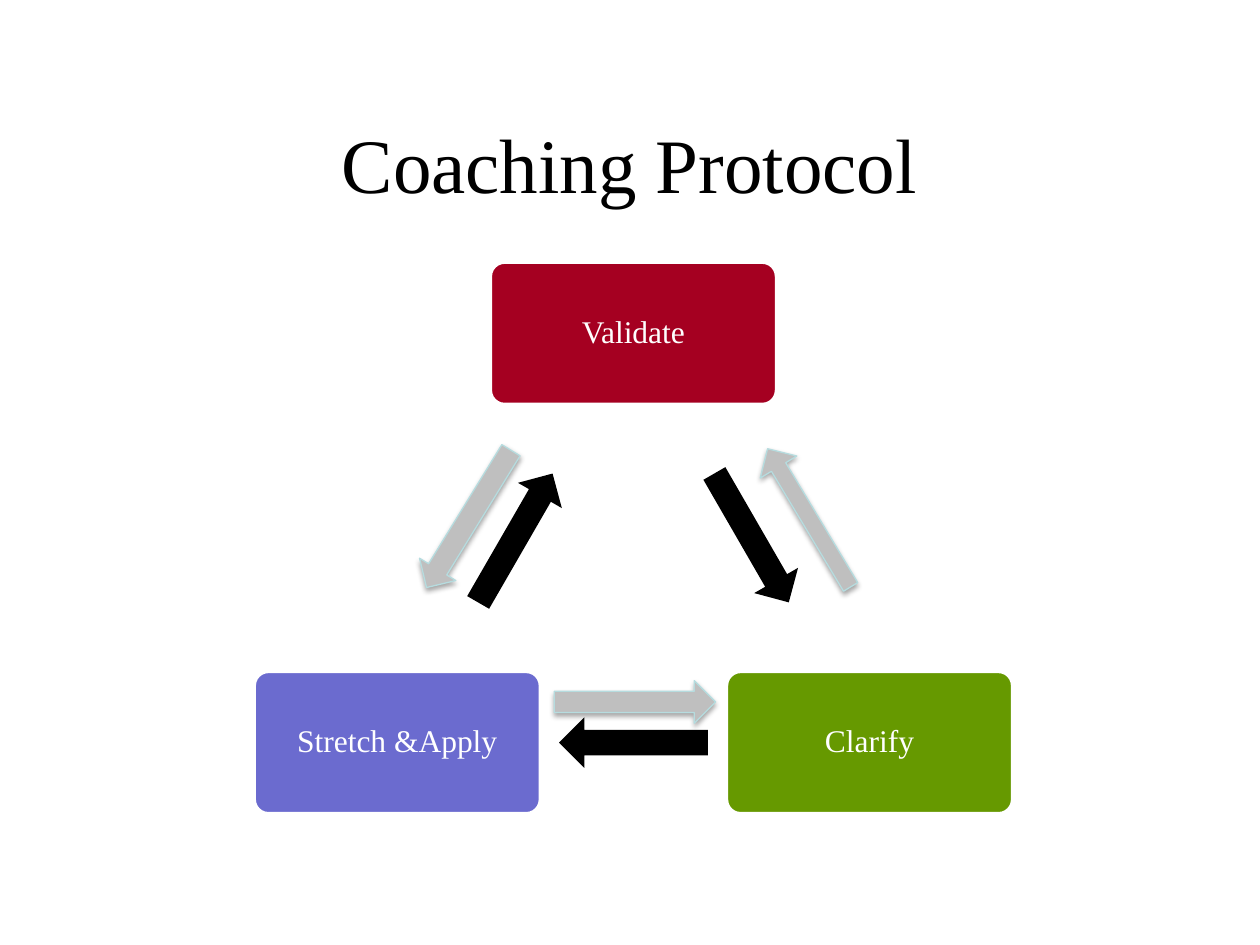
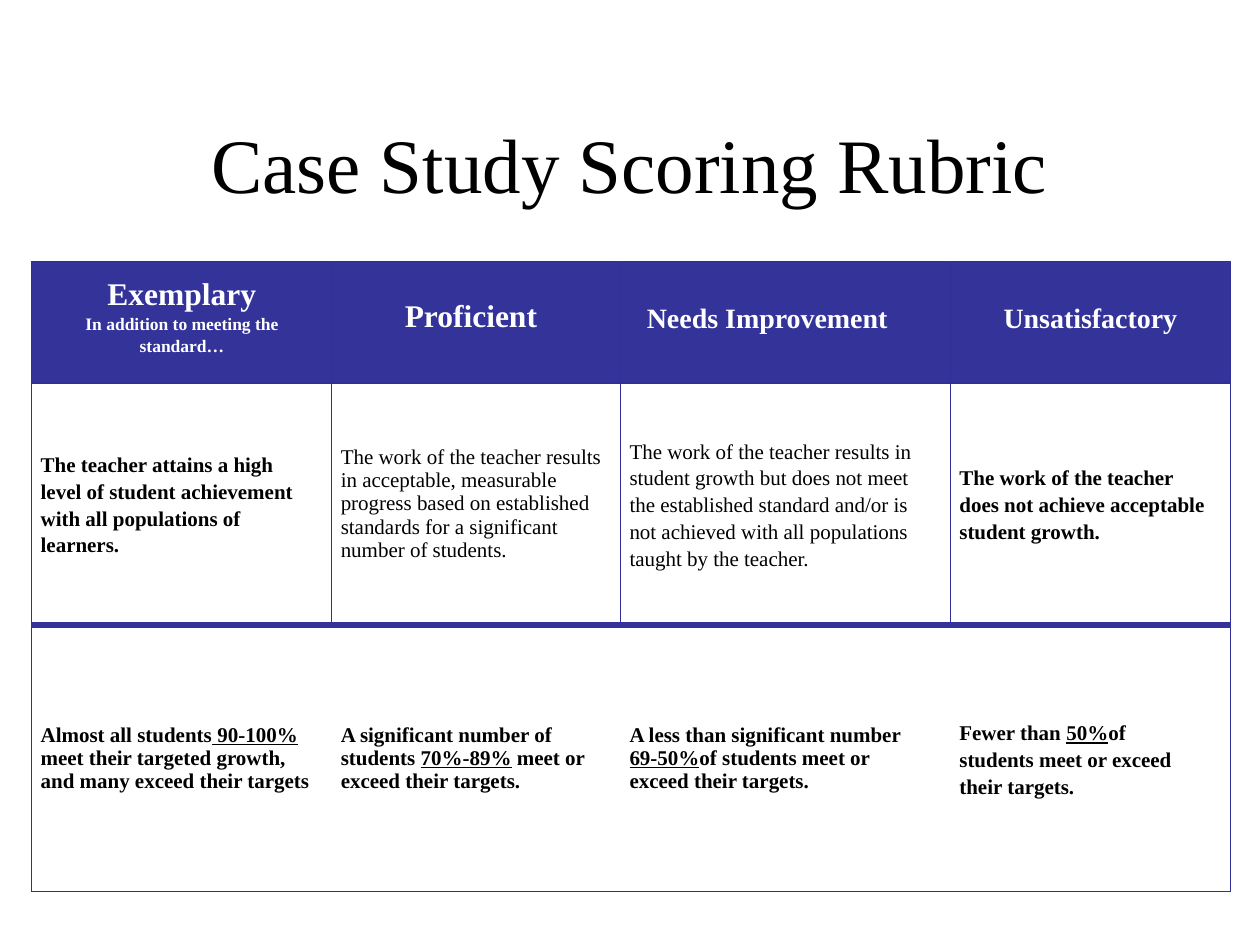
from dataclasses import dataclass
from typing import Optional

from lxml import etree
from pptx import Presentation
from pptx.dml.color import RGBColor
from pptx.enum.shapes import MSO_SHAPE as Shape
from pptx.enum.text import MSO_ANCHOR as Anchor, PP_ALIGN as Align
from pptx.oxml.ns import qn
from pptx.util import Cm, Pt


@dataclass(frozen=True)
class Theme:
    font: str = "Times New Roman"
    black: str = "000000"
    white: str = "FFFFFF"
    red: str = "A50021"
    green: str = "669900"
    violet: str = "6B6BCF"
    grey: str = "BFBFBF"
    pale_teal: str = "B6DCDF"
    navy: str = "333399"
    rule: str = "2F2F98"
    title: float = 44
    label: float = 18
    header: float = 16
    body: float = 12
    note: float = 10


T = Theme()


@dataclass(frozen=True)
class Step:
    text: str
    color: str
    x: float  # centre, cm
    y: float


@dataclass(frozen=True)
class Arrow:
    kind: Shape
    x: float  # centre, cm
    y: float
    width: float
    height: float
    angle: float
    fill: str
    outline: Optional[str] = None
    head: float = 0.5


@dataclass(frozen=True)
class Line:
    """One paragraph; text between underscores is underlined."""
    text: str
    size: float = T.body
    color: str = T.black
    bold: bool = True
    align: Align = Align.LEFT
    spacing: float = 1.15


@dataclass(frozen=True)
class RubricCell:
    lines: tuple[Line, ...]
    left: float = 0.18
    right: float = 0.0


def rgb(color: str) -> RGBColor:
    return RGBColor.from_string(color)


def write_line(p, line: Line) -> None:
    p.alignment = line.align
    p.line_spacing = line.spacing
    for i, part in enumerate(line.text.split("_")):
        r = p.add_run()
        r.text = part
        r.font.name = T.font
        r.font.size = Pt(line.size)
        r.font.bold = line.bold
        r.font.color.rgb = rgb(line.color)
        if i % 2:
            r.font.underline = True


def add_title_slide(prs, title: str):
    s = prs.slides.add_slide(prs.slide_layouts[6])
    tf = s.shapes.add_textbox(Cm(1.9), Cm(1.7), Cm(21.59), Cm(3.18)).text_frame
    tf.word_wrap = True
    tf.vertical_anchor = Anchor.MIDDLE
    write_line(tf.paragraphs[0],
               Line(title, T.title, bold=False, align=Align.CENTER, spacing=1.0))
    return s


def add_centred(s, kind: Shape, x: float, y: float, width: float, height: float,
                fill: str, outline: Optional[str], weight: float):
    sp = s.shapes.add_shape(kind, Cm(x - width / 2), Cm(y - height / 2),
                            Cm(width), Cm(height))
    sp.shadow.inherit = False
    sp.fill.solid()
    sp.fill.fore_color.rgb = rgb(fill)
    if outline:
        sp.line.color.rgb = rgb(outline)
        sp.line.width = Pt(weight)
    else:
        sp.line.fill.background()
    return sp


def add_step(s, step: Step) -> None:
    sp = add_centred(s, Shape.ROUNDED_RECTANGLE, step.x, step.y, 5.77, 2.87,
                     step.color, T.white, 2)
    sp.adjustments[0] = 0.1
    tf = sp.text_frame
    tf.word_wrap = True
    tf.vertical_anchor = Anchor.MIDDLE
    write_line(tf.paragraphs[0], Line(step.text, T.label, T.white, False,
                                      Align.CENTER, 0.9))


def add_soft_shadow(sp) -> None:
    effects = sp._element.spPr.find(qn("a:effectLst"))
    shadow = etree.SubElement(effects, qn("a:outerShdw"), blurRad=str(Pt(3.1)),
                              dist=str(Pt(1.8)), dir="5400000", rotWithShape="0")
    color = etree.SubElement(shadow, qn("a:srgbClr"), val=T.black)
    etree.SubElement(color, qn("a:alpha"), val="35000")


def add_arrow(s, arrow: Arrow) -> None:
    sp = add_centred(s, arrow.kind, arrow.x, arrow.y, arrow.width, arrow.height,
                     arrow.fill, arrow.outline, 0.75)
    sp.rotation = arrow.angle
    sp.adjustments[0] = arrow.head
    if arrow.outline:
        add_soft_shadow(sp)


def set_border(cell, side: str, color: Optional[str], weight: float) -> None:
    tcPr = cell._tc.get_or_add_tcPr()
    ln = etree.SubElement(tcPr, qn(f"a:ln{side}"), w=str(Pt(weight)))
    if color:
        fill = etree.SubElement(ln, qn("a:solidFill"))
        etree.SubElement(fill, qn("a:srgbClr"), val=color)
    else:
        etree.SubElement(ln, qn("a:noFill"))


def border_cell(cell, row: int, col: int, last_col: int) -> None:
    """Only the bottom row has no rules between its columns."""
    for side, outer in (("L", col == 0), ("R", col == last_col)):
        set_border(cell, side, T.rule if row < 2 or outer else None, 0.75)
    for side, heavy in (("T", row == 2), ("B", row == 1)):
        set_border(cell, side, T.navy if heavy else T.rule, 4 if heavy else 0.75)


def fill_cell(cell, content: RubricCell, background: str) -> None:
    cell.fill.solid()
    cell.fill.fore_color.rgb = rgb(background)
    cell.vertical_anchor = Anchor.MIDDLE
    cell.margin_left, cell.margin_right = Cm(content.left), Cm(content.right)
    cell.margin_top = cell.margin_bottom = 0
    tf = cell.text_frame
    for i, line in enumerate(content.lines):
        write_line(tf.add_paragraph() if i else tf.paragraphs[0], line)


def heading(text: str, size: float, left: float) -> RubricCell:
    return RubricCell((Line(text, size, T.white, spacing=Pt(13.6)),), left)


def entry(text: str, right: float, bold: bool = True,
          spacing: float = 1.15) -> RubricCell:
    return RubricCell((Line(text, bold=bold, spacing=spacing),), right=right)


def build_protocol(prs) -> None:
    s = add_title_slide(prs, "Coaching Protocol")
    mid, reach, top, bottom = 12.77, 4.76, 6.72, 14.97
    steps = (Step("Validate", T.red, mid, top),
             Step("Clarify", T.green, mid + reach, bottom),
             Step("Stretch &Apply", T.violet, mid - reach, bottom))
    for i, step in enumerate(steps):
        add_step(s, step)
        following = steps[(i + 1) % len(steps)]
        add_arrow(s, Arrow(Shape.RIGHT_ARROW, (step.x + following.x) / 2,
                           (step.y + following.y) / 2, 3.0, 1.02,
                           60 + 120 * i, T.black))
    for x, y, angle, head in ((9.45, 10.46, 301.6, 0.5),
                              (16.31, 10.44, 59, 0.39),
                              (12.8, 14.15, 180, 0.5)):
        add_arrow(s, Arrow(Shape.LEFT_ARROW, x, y, 3.25, 0.86, angle,
                           T.grey, T.pale_teal, head))


RUBRIC = (
    (RubricCell((Line("Exemplary", T.label, T.white, align=Align.CENTER,
                      spacing=Pt(13.6)),
                 Line("In addition to meeting the standard…", T.note, T.white,
                      align=Align.CENTER)), 0.48, 0.48),
     heading("Proficient", T.label, 1.47),
     heading("Needs Improvement", T.header, 0.53),
     heading("Unsatisfactory", T.header, 1.07)),
    (entry("The teacher attains a high level of student achievement with all "
           "populations of learners.", 0.5),
     entry("The work of the teacher results in acceptable, measurable progress "
           "based on established standards for a significant number of students.",
           0.13, False, 0.99),
     entry("The work of the teacher results in student growth but does not meet "
           "the established standard and/or is not achieved with all populations "
           "taught by the teacher.", 0.4, False),
     entry("The work of the teacher does not achieve acceptable student growth.",
           0.3)),
    (entry("Almost all students_ 90-100%_ meet their targeted growth, and many "
           "exceed their targets", 0.2, spacing=0.99),
     entry("A significant number of students _70%-89%_ meet or exceed their "
           "targets.", 0.13, spacing=0.99),
     entry("A less than significant number _69-50%_of students meet or exceed "
           "their targets.", 0.4, spacing=0.99),
     entry("Fewer than _50%_of students meet or exceed their targets.", 0.75)),
)


def build_rubric(prs) -> None:
    s = add_title_slide(prs, "Case Study Scoring Rubric")
    widths, heights = (6.05, 5.82, 6.65, 5.64), (2.44, 4.88, 5.38)
    table = s.shapes.add_table(len(heights), len(widths), Cm(0.64), Cm(5.28),
                               Cm(sum(widths)), Cm(sum(heights))).table
    table.horz_banding = False
    for column, width in zip(table.columns, widths):
        column.width = Cm(width)
    for i, (row, height) in enumerate(zip(table.rows, heights)):
        row.height = Cm(height)
        for j, cell in enumerate(row.cells):
            border_cell(cell, i, j, len(widths) - 1)
            fill_cell(cell, RUBRIC[i][j], T.white if i else T.navy)


def main() -> None:
    prs = Presentation()
    prs.slide_width, prs.slide_height = Cm(25.4), Cm(19.05)
    build_protocol(prs)
    build_rubric(prs)
    prs.save("out.pptx")


if __name__ == "__main__":
    main()
